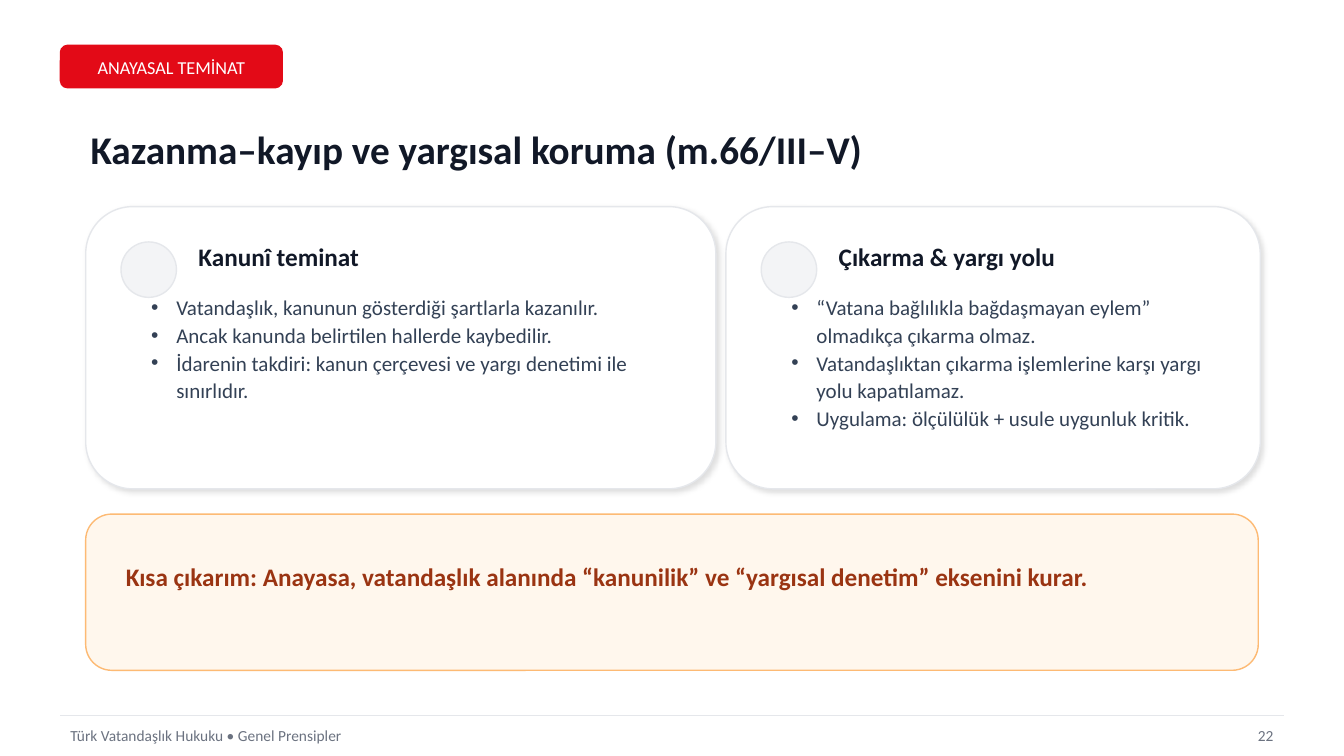
from lxml import etree
from pptx import Presentation
from pptx import util as u
from pptx.dml.color import RGBColor
from pptx.enum import shapes, text
from pptx.oxml.ns import qn

PX = 9144  # 100 px to the inch
FONT = "Calibri"
INK, BORDER, MUTED = "111827", "E5E7EB", "6B7280"
SHAPE = shapes.MSO_SHAPE
ALIGN = text.PP_ALIGN
ANCHOR = text.MSO_ANCHOR


def px(*lengths):
    return [u.Emu(n * PX) for n in lengths]


def color(hex_value):
    return RGBColor.from_string(hex_value)


def add_box(slide, kind, box, fill, line):
    sp = slide.shapes.add_shape(kind, *px(*box))
    sp.shadow.inherit = False
    sp.fill.solid()
    sp.fill.fore_color.rgb = color(fill)
    sp.line.color.rgb = color(line)
    sp.line.width = u.Pt(1)
    return sp


def add_soft_shadow(sp):
    effects = sp._element.spPr.find(qn("a:effectLst"))
    shadow = etree.SubElement(effects, qn("a:outerShdw"), blurRad=str(u.Pt(4)),
                              dist=str(u.Pt(2)), dir=str(45 * 60000),
                              algn="ctr", rotWithShape="0")
    tint = etree.SubElement(shadow, qn("a:srgbClr"), val="000000")
    etree.SubElement(tint, qn("a:alpha"), val="12000")


def add_bullet(p, indent=25):
    pPr = p._p.get_or_add_pPr()
    pPr.set("marL", str(indent * PX))
    pPr.set("indent", str(-indent * PX))
    etree.SubElement(pPr, qn("a:buFont"), typeface="Arial")
    etree.SubElement(pPr, qn("a:buChar"), char="•")


def add_text(slide, box, *lines, size, fill, bold=False, align=ALIGN.LEFT,
             anchor=ANCHOR.MIDDLE, bullets=False, spacing=None):
    tf = slide.shapes.add_textbox(*px(*box)).text_frame
    tf.word_wrap = True
    tf.vertical_anchor = anchor
    for i, line in enumerate(lines):
        p = tf.add_paragraph() if i else tf.paragraphs[0]
        p.alignment = align
        if spacing:
            p.line_spacing = spacing
        if bullets:
            add_bullet(p)
        r = p.add_run()
        r.text = line
        r.font.name = FONT
        r.font.size = u.Pt(size)
        r.font.bold = bold
        r.font.color.rgb = color(fill)


def add_tag(slide, box, label):
    x, y, w, h = box
    add_box(slide, SHAPE.ROUNDED_RECTANGLE, box, "E30A17", "E30A17")
    add_text(slide, (x, y + 7, w, 30), label, size=13, fill="FFFFFF",
             align=ALIGN.CENTER)


def add_card(slide, box, heading, points):
    x, y, w, h = box
    add_soft_shadow(add_box(slide, SHAPE.ROUNDED_RECTANGLE, box, "FFFFFF", BORDER))
    add_box(slide, SHAPE.OVAL, (x + 35, y + 35, 55, 55), "F3F4F6", BORDER)
    add_text(slide, (x + 102, y + 32, w - 125, 35), heading, size=18, fill=INK,
             bold=True)
    add_text(slide, (x + 55, y + 80, w - 90, h - 105), *points, size=15,
             fill="334155", anchor=ANCHOR.TOP, bullets=True, spacing=1.1)


def add_takeaway(slide, box, message):
    x, y, w, h = box
    add_box(slide, SHAPE.ROUNDED_RECTANGLE, box, "FFF7ED", "FDBA74")
    add_text(slide, (x + 30, y + 22, w - 60, 80), message, size=18,
             fill="9A3412", bold=True)


def add_footer(slide, box, source, number):
    x, y, w, h = box
    rule = slide.shapes.add_connector(shapes.MSO_CONNECTOR.STRAIGHT,
                                      *px(x, y, x + w, y))
    rule.line.color.rgb = color(BORDER)
    rule.line.width = u.Pt(1)
    etree.SubElement(rule._element.spPr, qn("a:effectLst"))
    add_text(slide, (x, y + 5, w - 60, h - 5), source, size=11, fill=MUTED)
    add_text(slide, (x + w - 50, y + 5, 50, h - 5), number, size=11, fill=MUTED,
             align=ALIGN.RIGHT)


def main():
    prs = Presentation()
    prs.slide_width, prs.slide_height = px(1333, 750)
    slide = prs.slides.add_slide(prs.slide_layouts[6])

    add_tag(slide, (60, 45, 220, 42), "ANAYASAL TEMİNAT")
    add_text(slide, (80, 110, 1173, 75),
             "Kazanma–kayıp ve yargısal koruma (m.66/III–V)",
             size=28, fill=INK, bold=True)
    add_card(slide, (85, 205, 625, 280), "Kanunî teminat", [
        "Vatandaşlık, kanunun gösterdiği şartlarla kazanılır.",
        "Ancak kanunda belirtilen hallerde kaybedilir.",
        "İdarenin takdiri: kanun çerçevesi ve yargı denetimi ile sınırlıdır.",
    ])
    add_card(slide, (720, 205, 530, 280), "Çıkarma & yargı yolu", [
        "“Vatana bağlılıkla bağdaşmayan eylem” olmadıkça çıkarma olmaz.",
        "Vatandaşlıktan çıkarma işlemlerine karşı yargı yolu kapatılamaz.",
        "Uygulama: ölçülülük + usule uygunluk kritik.",
    ])
    add_takeaway(slide, (85, 510, 1163, 155),
                 "Kısa çıkarım: Anayasa, vatandaşlık alanında “kanunilik” ve "
                 "“yargısal denetim” eksenini kurar.")
    add_footer(slide, (60, 710, 1213, 35),
               "Türk Vatandaşlık Hukuku • Genel Prensipler", "22")
    prs.save("out.pptx")


if __name__ == "__main__":
    main()
